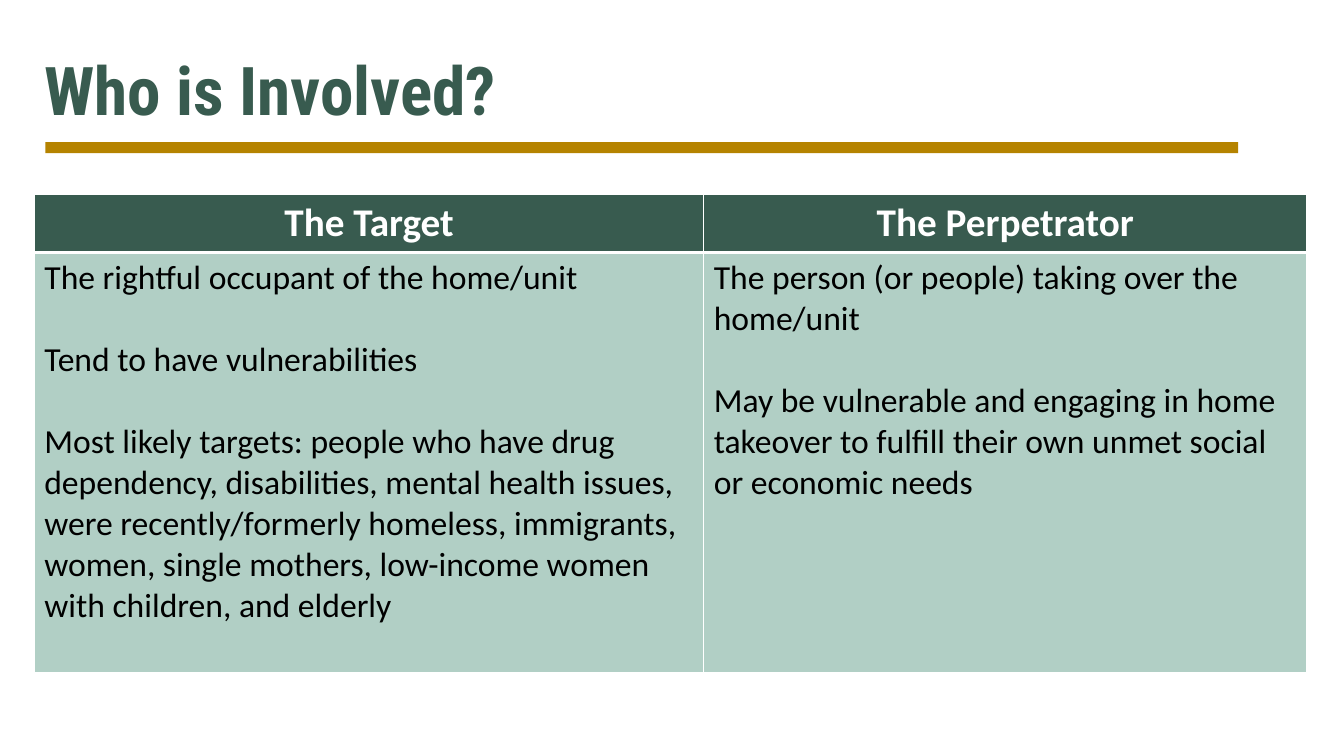
from lxml.etree import SubElement
from pptx import Presentation
from pptx.dml.color import RGBColor
from pptx.enum.shapes import MSO_SHAPE as Shape
from pptx.enum.text import MSO_ANCHOR as Anchor, PP_ALIGN as Align
from pptx.oxml.ns import qn
from pptx.util import Inches, Pt

GREEN, PALE_GREEN, GOLD = "385B4F", "B1CFC5", "B58300"
WHITE, BLACK = "FFFFFF", "000000"


def paint(fill, color):
    fill.solid()
    fill.fore_color.rgb = RGBColor.from_string(color)


def write(frame, *paragraphs, size, color, font="Calibri", bold=False,
          align=Align.LEFT, gap=0, line_spacing=1.0):
    frame.word_wrap = True
    for i, text in enumerate(paragraphs):
        paragraph = frame.add_paragraph() if i else frame.paragraphs[0]
        paragraph.alignment = align
        paragraph.line_spacing = line_spacing
        paragraph.space_before = Pt(gap if i else 0)
        run = paragraph.add_run()
        run.text = text
        run.font.name, run.font.size, run.font.bold = font, Pt(size), bold
        run.font.color.rgb = RGBColor.from_string(color)


prs = Presentation()
prs.slide_width, prs.slide_height = Inches(13.33), Inches(7.5)
slide = prs.slides.add_slide(prs.slide_layouts[6])

# Comparison table
columns = [
    ("The Target", 6.64, [
        "The rightful occupant of the home/unit",
        "Tend to have vulnerabilities",
        "Most likely targets: people who have drug dependency, disabilities, "
        "mental health issues, were recently/formerly homeless, immigrants, "
        "women, single mothers, low-income women with children, and elderly",
    ]),
    ("The Perpetrator", 5.98, [
        "The person (or people) taking over the home/unit",
        "May be vulnerable and engaging in home takeover to fulfill their own "
        "unmet social or economic needs",
    ]),
]
roles = slide.shapes.add_table(2, 2, Inches(0.34), Inches(1.93),
                               Inches(12.62), Inches(4.74)).table
for row, height in zip(roles.rows, (0.57, 4.17)):
    row.height = Inches(height)

for i, (heading, width, points) in enumerate(columns):
    roles.columns[i].width = Inches(width)
    write(roles.cell(0, i).text_frame, heading, size=28, color=WHITE,
          bold=True, align=Align.CENTER)
    write(roles.cell(1, i).text_frame, *points, size=24, color=BLACK, gap=29.3)

    # White borders, thicker between heading and body
    for r, (background, top, bottom) in enumerate([(GREEN, 1, 3), (PALE_GREEN, 3, 1)]):
        cell = roles.cell(r, i)
        properties = cell._tc.get_or_add_tcPr()
        for side, points_wide in (("L", 1), ("R", 1), ("T", top), ("B", bottom)):
            border = SubElement(properties, qn(f"a:ln{side}"), w=str(Pt(points_wide)))
            border_fill = SubElement(border, qn("a:solidFill"))
            SubElement(border_fill, qn("a:srgbClr"), val=WHITE)
        paint(cell.fill, background)

# Title
title = slide.shapes.add_textbox(Inches(0.34), Inches(0.2), Inches(12.99), Inches(1.45))
title.text_frame.vertical_anchor = Anchor.MIDDLE
write(title.text_frame, "Who is Involved?", size=48, color=GREEN,
      font="Roboto Condensed", bold=True, line_spacing=0.9)

# Gold rule under the title
rule = slide.shapes.add_shape(Shape.RECTANGLE, Inches(0.45), Inches(1.41),
                              Inches(11.83), Inches(0.11))
rule.shadow.inherit = False
paint(rule.fill, GOLD)
rule.line.fill.background()

prs.save("out.pptx")
